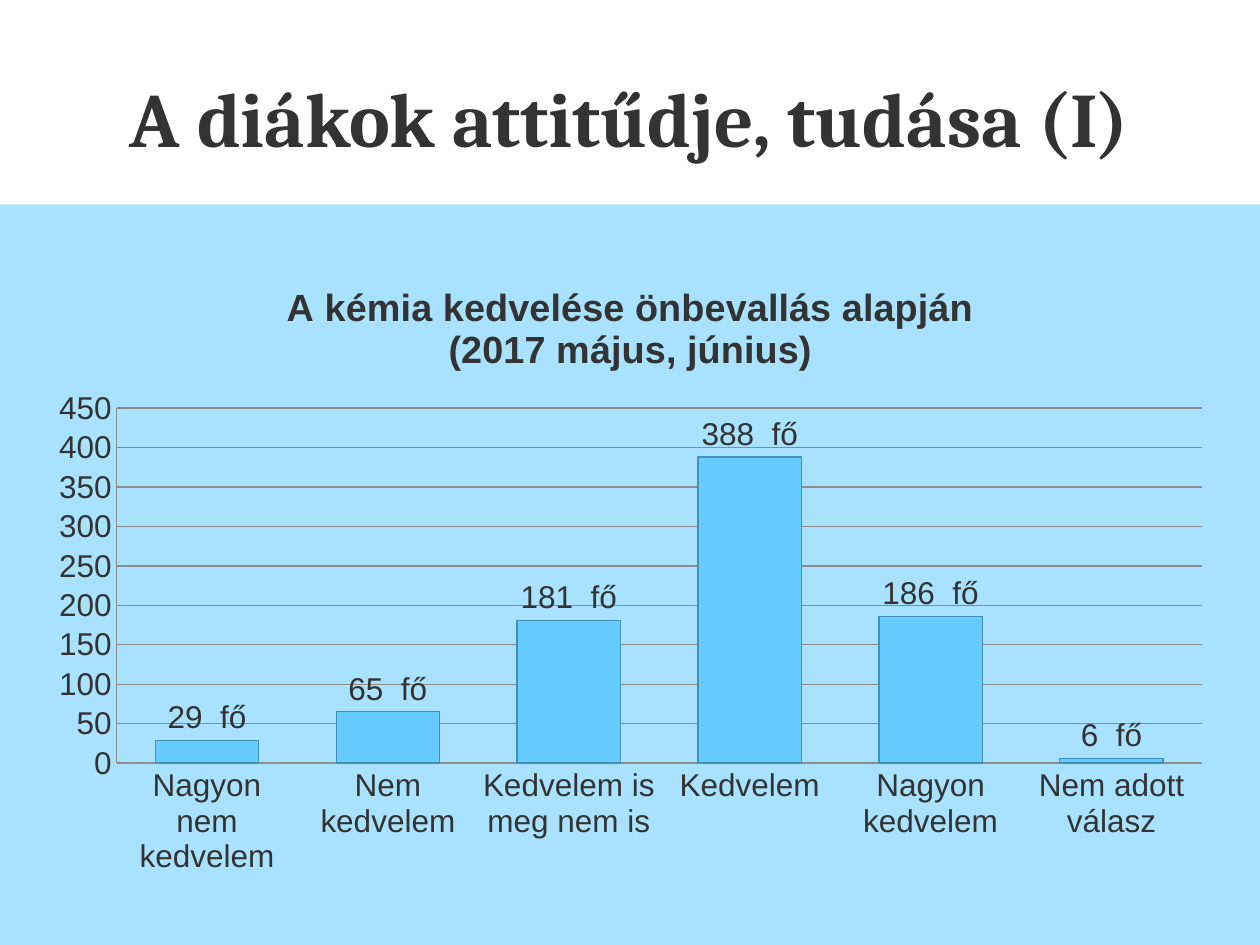
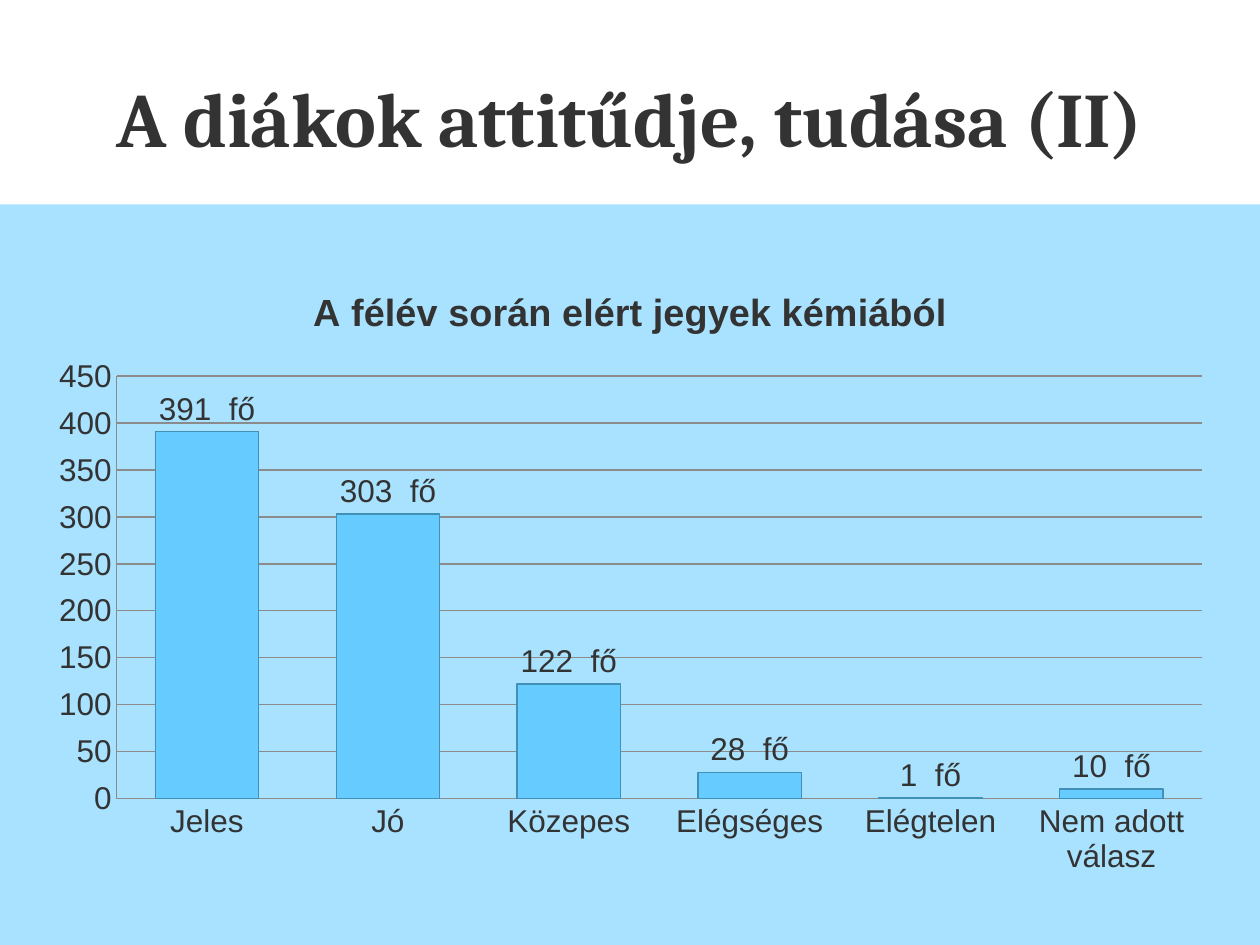
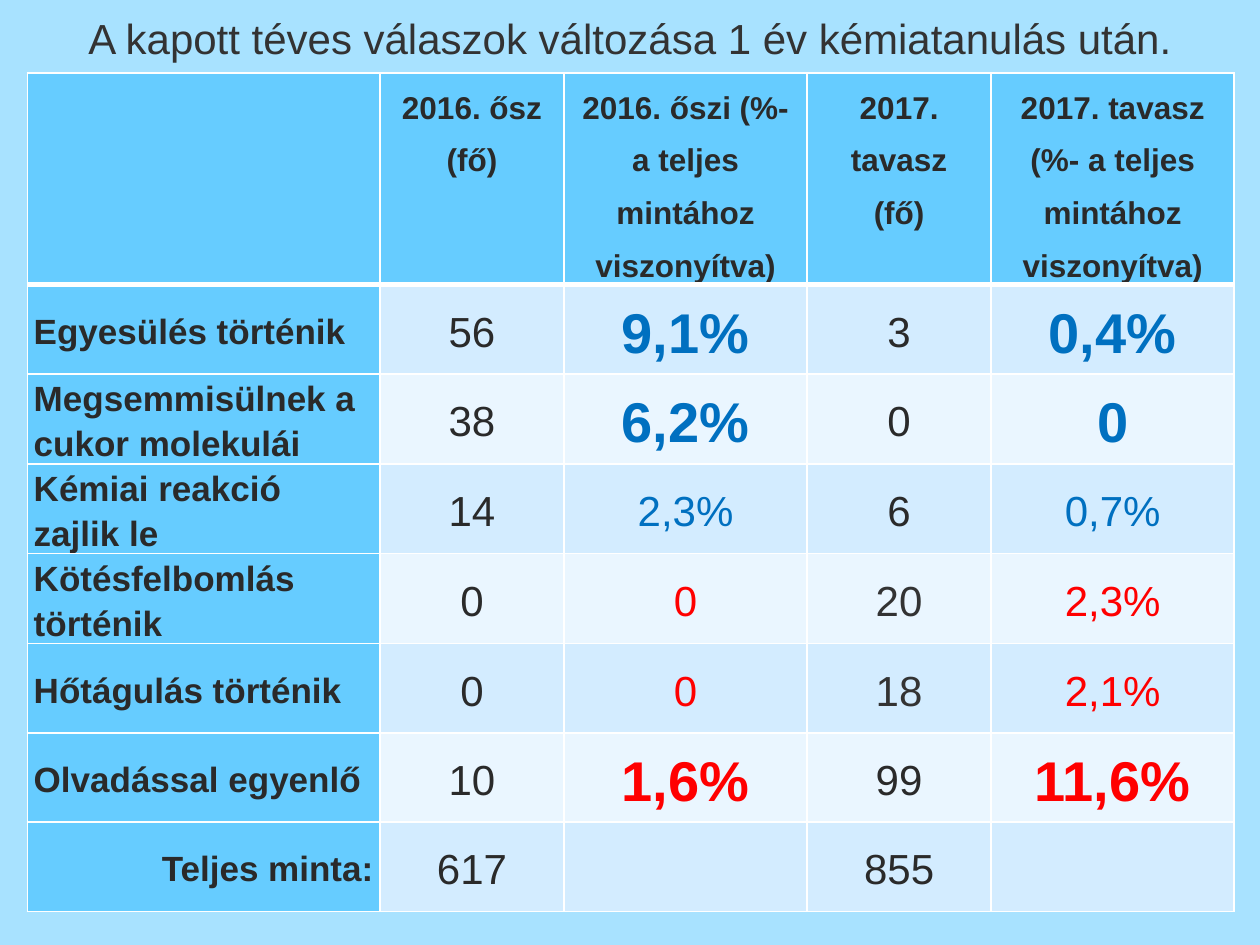
from lxml import etree
from pptx import Presentation
from pptx.chart.data import CategoryChartData
from pptx.dml.color import RGBColor
from pptx.enum.chart import XL_CHART_TYPE, XL_LABEL_POSITION, XL_TICK_MARK
from pptx.enum.shapes import MSO_SHAPE
from pptx.enum.text import MSO_ANCHOR, PP_ALIGN
from pptx.oxml.ns import qn
from pptx.util import Cm, Pt

COLUMN = XL_CHART_TYPE.COLUMN_CLUSTERED
OUTSIDE = XL_LABEL_POSITION.OUTSIDE_END
NO_TICK = XL_TICK_MARK.NONE
RECT = MSO_SHAPE.RECTANGLE
MIDDLE = MSO_ANCHOR.MIDDLE
LEFT, CENTER, RIGHT = PP_ALIGN.LEFT, PP_ALIGN.CENTER, PP_ALIGN.RIGHT

# Shared look
SKY, TEXT, INK, WHITE = "66CCFF", "333333", "2A2A2A", "FFFFFF"
BLUE, RED = "0070C0", "FF0000"
BANDS = ("D3ECFF", "EAF6FF")
GRID, EDGE = "8B8B8B", "4090B8"
SANS, SERIF = "Arial", "Cambria"
WIDE, HIGH = 25.4, 19.05
COUNT = r"#,##0_\\ \f\ő"

# Content
CHARTS = [
    ("A diákok attitűdje, tudása (I)",
     ["A kémia kedvelése önbevallás alapján", "(2017 május, június)"],
     {"Nagyon nem kedvelem": 29, "Nem kedvelem": 65,
      "Kedvelem is meg nem is": 181, "Kedvelem": 388,
      "Nagyon kedvelem": 186, "Nem adott válasz": 6}),
    ("A diákok attitűdje, tudása (II)",
     ["A félév során elért jegyek kémiából"],
     {"Jeles": 391, "Jó": 303, "Közepes": 122, "Elégséges": 28,
      "Elégtelen": 1, "Nem adott válasz": 10}),
]
LEAD = "A kapott téves válaszok változása 1 év kémiatanulás után."
HEADS = [[], ["2016. ősz (fő)"],
         ["2016. őszi (%- a teljes mintához viszonyítva)"],
         ["2017. tavasz", "(fő)"],
         ["2017. tavasz (%- a teljes mintához viszonyítva)"]]
# label, values, colour of the shares, large shares, colour of the 2017 count
ROWS = [
    ("Egyesülés történik", ("56", "9,1%", "3", "0,4%"), BLUE, True, INK),
    ("Megsemmisülnek a cukor molekulái", ("38", "6,2%", "0", "0"),
     BLUE, True, INK),
    ("Kémiai reakció zajlik le", ("14", "2,3%", "6", "0,7%"),
     BLUE, False, INK),
    ("Kötésfelbomlás történik", ("0", "0", "20", "2,3%"), RED, False, TEXT),
    ("Hőtágulás történik", ("0", "0", "18", "2,1%"), RED, False, TEXT),
    ("Olvadással egyenlő", ("10", "1,6%", "99", "11,6%"), RED, True, INK),
    ("Teljes minta:", ("617", "", "855", ""), INK, False, INK),
]
COLS = (7.11, 3.71, 4.9, 3.71, 4.9)
HEAD_ROW, BODY_ROW = 4.27, 1.8


def rgb(code):
    return RGBColor.from_string(code)


def style(font, size, color, bold=False, face=SANS):
    font.name, font.size, font.bold = face, Pt(size), bold
    font.color.rgb = rgb(color)


def write(frame, lines, size, color, bold=False, face=SANS,
          align=CENTER, space=None):
    for i, line in enumerate(lines):
        para = frame.paragraphs[0] if i == 0 else frame.add_paragraph()
        para.alignment = align
        if space:
            para.line_spacing = space
        run = para.add_run()
        run.text = line
        style(run.font, size, color, bold, face)


def add_band(slide, top):
    band = slide.shapes.add_shape(RECT, 0, Cm(top), Cm(WIDE), Cm(HIGH - top))
    band.shadow.inherit = False
    band.line.fill.background()
    band.fill.solid()
    band.fill.fore_color.rgb = rgb(SKY)
    tint = band.fill._xPr.find(qn("a:solidFill"))[0]
    etree.SubElement(tint, qn("a:alpha"), val="57000")


def add_title(slide, text):
    title = slide.shapes.title
    title.left, title.top = Cm(1.27), Cm(0.76)
    title.width, title.height = Cm(22.86), Cm(3.18)
    title.text_frame.vertical_anchor = MIDDLE
    write(title.text_frame, [text], 44, TEXT, True, SERIF)


def add_bars(slide, heads, counts):
    data = CategoryChartData()
    data.categories = list(counts)
    data.add_series("Series 1", list(counts.values()))
    chart = slide.shapes.add_chart(
        COLUMN, Cm(0.71), Cm(5.28), Cm(24), Cm(12.6), data).chart
    chart.has_legend = False
    style(chart.font, 18, TEXT)
    chart.has_title = True
    write(chart.chart_title.text_frame, heads, 21.6, TEXT, True)
    chart.chart_title.include_in_layout = False

    # Bars and their labels
    plot = chart.plots[0]
    plot.gap_width, plot.overlap = 75, 40
    plot.vary_by_categories = False
    look = plot.series[0].format
    look.fill.solid()
    look.fill.fore_color.rgb = rgb(SKY)
    look.line.color.rgb = rgb(EDGE)
    look.line.width = Pt(0.75)
    plot.has_data_labels = True
    tags = plot.data_labels
    tags.show_value = True
    tags.position = OUTSIDE
    tags.number_format, tags.number_format_is_linked = COUNT, False
    style(tags.font, 18, TEXT)

    # Axes
    scale = chart.value_axis
    scale.minimum_scale, scale.maximum_scale, scale.major_unit = 0, 450, 50
    lines = [scale.major_gridlines.format.line]
    for axis in (scale, chart.category_axis):
        axis.major_tick_mark = axis.minor_tick_mark = NO_TICK
        style(axis.tick_labels.font, 18, TEXT)
        lines.append(axis.format.line)
    for line in lines:
        line.color.rgb = rgb(GRID)
        line.width = Pt(0.75)


def set_cell(cell, fill, top, bottom):
    cell.margin_left = cell.margin_right = Cm(0.13)
    cell.margin_top = cell.margin_bottom = 0
    cell.fill.solid()
    cell.fill.fore_color.rgb = rgb(fill)
    props = cell._tc.get_or_add_tcPr()
    sides = (("L", 1), ("R", 1), ("T", top), ("B", bottom))
    for i, (side, width) in enumerate(sides):
        line = etree.Element(qn("a:ln" + side), w=str(Pt(width)))
        paint = etree.SubElement(line, qn("a:solidFill"))
        etree.SubElement(paint, qn("a:srgbClr"), val=WHITE)
        props.insert(i, line)


def add_grid(slide):
    high = HEAD_ROW + BODY_ROW * len(ROWS)
    table = slide.shapes.add_table(
        len(ROWS) + 1, len(COLS), Cm(0.55), Cm(1.47),
        Cm(sum(COLS)), Cm(high)).table
    for col, width in zip(table.columns, COLS):
        col.width = Cm(width)
    for i, row in enumerate(table.rows):
        row.height = Cm(BODY_ROW if i else HEAD_ROW)

    for c, lines in enumerate(HEADS):
        cell = table.cell(0, c)
        set_cell(cell, SKY, 1, 3)
        write(cell.text_frame, lines, 18, INK, True, space=1.5)

    for r, (label, values, accent, large, late) in enumerate(ROWS, 1):
        side = RIGHT if r == len(ROWS) else LEFT
        share = (32 if large else 24, accent, large)
        looks = ((24, INK), share, (24, late), share)
        for c in range(len(COLS)):
            cell = table.cell(r, c)
            set_cell(cell, BANDS[(r - 1) % 2] if c else SKY,
                     3 if r == 1 else 1, 1)
            cell.vertical_anchor = MIDDLE
            if c == 0:
                write(cell.text_frame, [label], 20, INK, True,
                      align=side, space=1.15)
            elif values[c - 1]:
                write(cell.text_frame, [values[c - 1]], *looks[c - 1],
                      space=1.15)


def main():
    deck = Presentation()
    deck.slide_width, deck.slide_height = Cm(WIDE), Cm(HIGH)

    # Two chart slides
    for title, heads, counts in CHARTS:
        slide = deck.slides.add_slide(deck.slide_layouts[5])
        add_band(slide, 4.12)
        add_title(slide, title)
        add_bars(slide, heads, counts)

    # Table slide
    slide = deck.slides.add_slide(deck.slide_layouts[6])
    add_band(slide, 0)
    add_grid(slide)
    box = slide.shapes.add_textbox(Cm(0.55), Cm(0.13), Cm(24.3), Cm(1.27))
    box.text_frame.word_wrap = True
    write(box.text_frame, [LEAD], 24, TEXT)

    deck.save("out.pptx")


if __name__ == "__main__":
    main()
